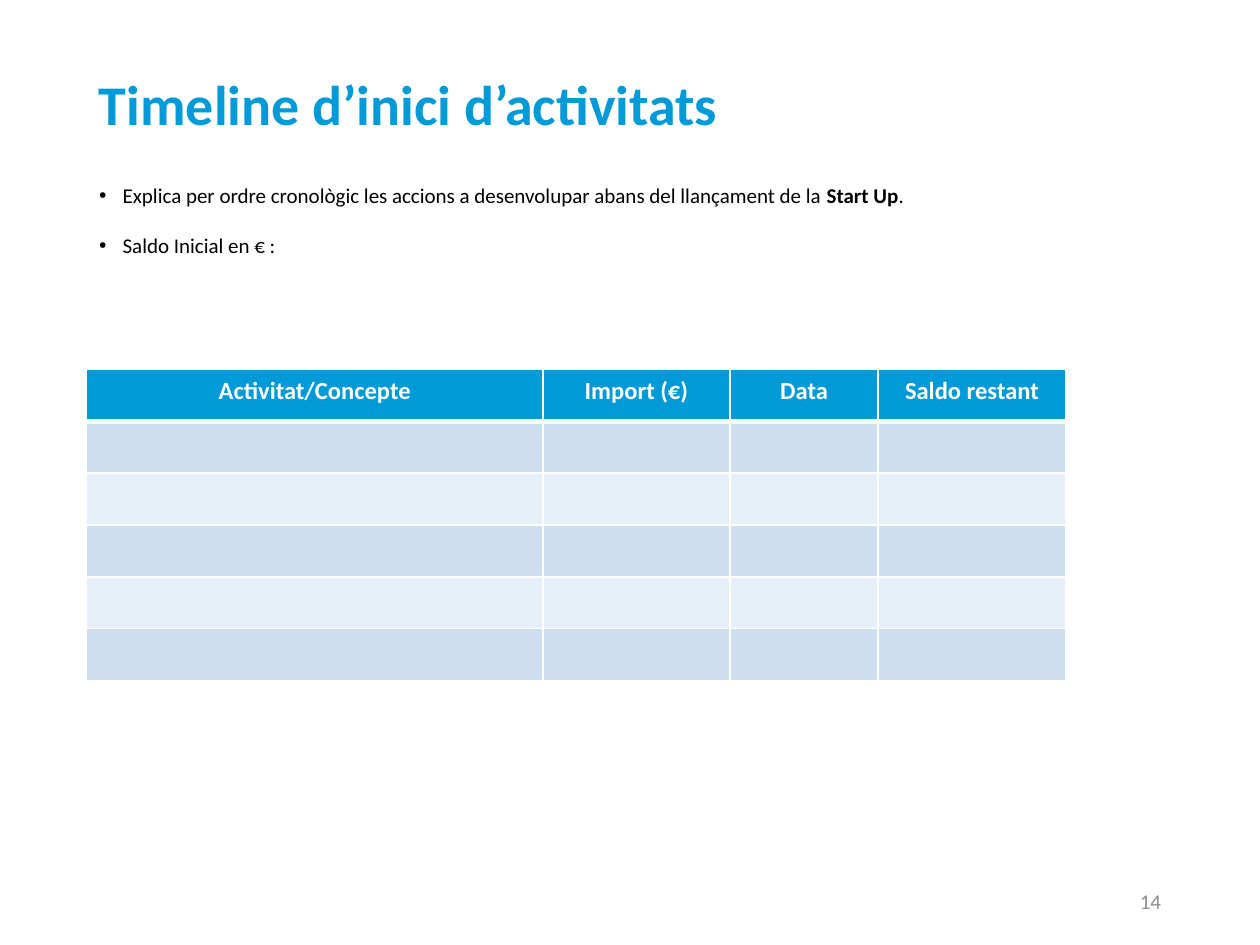
from lxml.etree import SubElement
from pptx import Presentation
from pptx.dml.color import RGBColor
from pptx.enum.text import MSO_ANCHOR, PP_ALIGN
from pptx.oxml.ns import qn
from pptx.util import Pt

FONT = "Calibri"
BLUE, WHITE, BLACK, GREY = "009AD8", "FFFFFF", "000000", "8C8C8C"
BANDS = ("CCDEF0", "E7EFF8")
HEADERS = ("Activitat/Concepte", "Import (€)", "Data", "Saldo restant")
COLUMN_WIDTHS = (260.8, 106.8, 84.8, 107.2)
BODY_ROWS = 5
BULLETS = (
    (
        ("Explica per ordre cronològic les accions a desenvolupar abans del llançament de la ", False),
        ("Start Up", True),
        (".", False),
    ),
    (("Saldo Inicial en € :", False),),
)


def color(hex_string):
    return RGBColor.from_string(hex_string)


def add_run(paragraph, text, size, hex_string, bold=False):
    run = paragraph.add_run()
    run.text = text
    run.font.name = FONT
    run.font.size = Pt(size)
    run.font.bold = bold
    run.font.color.rgb = color(hex_string)


def add_text_frame(slide, box, anchor):
    shape = slide.shapes.add_textbox(*map(Pt, box))
    text_frame = shape.text_frame
    text_frame.word_wrap = True
    text_frame.vertical_anchor = anchor
    return text_frame


def add_title(slide, box):
    paragraph = add_text_frame(slide, box, MSO_ANCHOR.MIDDLE).paragraphs[0]
    paragraph.line_spacing = 0.9
    add_run(paragraph, "Timeline d’inici d’activitats", 32, BLUE, True)


def add_slide_number(slide, box):
    paragraph = add_text_frame(slide, box, MSO_ANCHOR.MIDDLE).paragraphs[0]
    paragraph.alignment = PP_ALIGN.RIGHT
    add_run(paragraph, "14", 12, GREY)


def add_bullets(slide, box):
    text_frame = add_text_frame(slide, box, MSO_ANCHOR.TOP)
    for index, runs in enumerate(BULLETS):
        paragraph = text_frame.add_paragraph() if index else text_frame.paragraphs[0]
        paragraph.space_before = Pt(14 if index else 0)
        # Hanging bullet
        properties = paragraph._p.get_or_add_pPr()
        properties.set("marL", str(Pt(13.5)))
        properties.set("indent", str(-Pt(13.5)))
        SubElement(properties, qn("a:buFont"), typeface="Arial")
        SubElement(properties, qn("a:buChar"), char="•")
        for text, bold in runs:
            add_run(paragraph, text, 12, BLACK, bold)


def set_borders(cell, top, bottom):
    properties = cell._tc.get_or_add_tcPr()
    for side, width in (("L", 1), ("R", 1), ("T", top), ("B", bottom)):
        line = SubElement(properties, qn(f"a:ln{side}"), w=str(Pt(width)))
        fill = SubElement(line, qn("a:solidFill"))
        SubElement(fill, qn("a:srgbClr"), val=WHITE)


def add_activity_table(slide, box):
    row_count = BODY_ROWS + 1
    table = slide.shapes.add_table(row_count, len(HEADERS), *map(Pt, box)).table
    for column, width in zip(table.columns, COLUMN_WIDTHS):
        column.width = Pt(width)
    for row_index, row in enumerate(table.rows):
        row.height = Pt(box[3] / row_count)
        is_header = row_index == 0
        for cell, header in zip(row.cells, HEADERS):
            # A thick rule parts the header from the banded rows
            set_borders(cell, 3 if row_index == 1 else 1, 3 if is_header else 1)
            cell.fill.solid()
            cell.fill.fore_color.rgb = color(BLUE if is_header else BANDS[(row_index - 1) % 2])
            if is_header:
                paragraph = cell.text_frame.paragraphs[0]
                paragraph.alignment = PP_ALIGN.CENTER
                add_run(paragraph, header, 14, WHITE, True)


def main():
    presentation = Presentation()
    presentation.slide_width, presentation.slide_height = Pt(720), Pt(540)
    slide = presentation.slides.add_slide(presentation.slide_layouts[6])
    add_title(slide, (49.5, 34, 621, 54.5))
    add_slide_number(slide, (508.5, 500.5, 162, 28.75))
    add_bullets(slide, (49.5, 101, 486, 51))
    add_activity_table(slide, (49.5, 211.2, sum(COLUMN_WIDTHS), 177.6))
    presentation.save("out.pptx")


if __name__ == "__main__":
    main()
